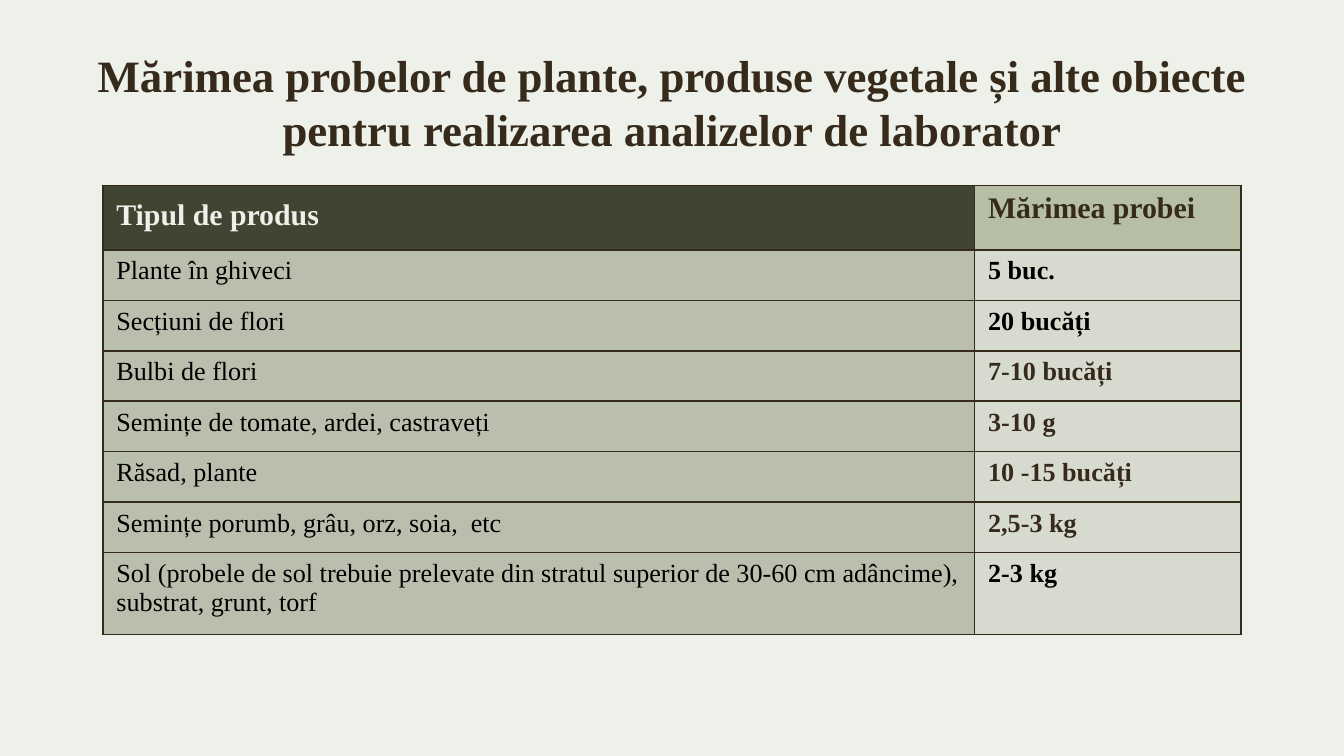
from dataclasses import dataclass

from lxml.etree import SubElement
from pptx import Presentation
from pptx.dml.color import RGBColor
from pptx.enum.text import MSO_ANCHOR, MSO_AUTO_SIZE, PP_ALIGN
from pptx.oxml.ns import qn
from pptx.util import Inches, Pt


@dataclass(frozen=True)
class Theme:
    font: str = "Times New Roman"
    paper: str = "EEF0EA"
    brown: str = "362A1B"
    black: str = "000000"
    olive: str = "3F4531"
    sage: str = "B6BFA5"
    moss: str = "727C57"
    product_opacity: int = 42
    amount_opacity: int = 18
    title_size: int = 24
    header_size: int = 16
    body_size: int = 14
    border: float = 1


THEME = Theme()
SLIDE_WIDTH = Inches(10)
SLIDE_HEIGHT = SLIDE_WIDTH * 9 // 16
TITLE = "Mărimea probelor de plante, produse vegetale și alte obiecte pentru realizarea analizelor de laborator"
HEADERS = ("Tipul de produs", "Mărimea probei")
SAMPLES = [
    ("Plante în ghiveci", "5 buc.", THEME.black),
    ("Secțiuni de flori", "20 bucăți", THEME.black),
    ("Bulbi de flori", "7-10 bucăți", THEME.brown),
    ("Semințe de tomate, ardei, castraveți", "3-10 g", THEME.brown),
    ("Răsad, plante", "10 -15 bucăți", THEME.brown),
    ("Semințe porumb, grâu, orz, soia,  etc", "2,5-3 kg", THEME.brown),
    ("Sol (probele de sol trebuie prelevate din stratul superior de 30-60 cm adâncime), "
     "substrat, grunt, torf", "2-3 kg", THEME.black),
]


def apply(target, formats):
    for attribute, value in formats.items():
        setattr(target, attribute, value)


def share_box(left, top, width, height):
    """Turn percentages of the slide into lengths."""
    return (int(SLIDE_WIDTH * left / 100), int(SLIDE_HEIGHT * top / 100),
            int(SLIDE_WIDTH * width / 100), int(SLIDE_HEIGHT * height / 100))


def write(paragraph, text, size, color, bold):
    paragraph.text = text
    apply(paragraph.runs[0].font, {"name": THEME.font, "size": Pt(size), "bold": bold})
    paragraph.runs[0].font.color.rgb = RGBColor.from_string(color)


def add_borders(cell):
    properties = cell._tc.get_or_add_tcPr()
    for side in ("lnL", "lnR", "lnT", "lnB"):
        line = SubElement(properties, qn(f"a:{side}"), w=str(Pt(THEME.border)))
        paint = SubElement(line, qn("a:solidFill"))
        SubElement(paint, qn("a:srgbClr"), val=THEME.brown)


def fill_cell(cell, color, opacity=100):
    cell.fill.solid()
    cell.fill.fore_color.rgb = RGBColor.from_string(color)
    if opacity < 100:
        tint = cell._tc.tcPr.find(f"{qn('a:solidFill')}/{qn('a:srgbClr')}")
        SubElement(tint, qn("a:alpha"), val=str(opacity * 1000))


def place_cell(cell, text, size, color, bold, fill, opacity=100, inset=0.05):
    apply(cell, {"margin_left": Inches(0.1), "margin_right": Inches(0.1),
                 "margin_top": Inches(inset), "margin_bottom": Inches(inset),
                 "vertical_anchor": MSO_ANCHOR.TOP})
    add_borders(cell)
    fill_cell(cell, fill, opacity)
    write(cell.text_frame.paragraphs[0], text, size, color, bold)


def place_title(slide, box):
    title = slide.shapes.title
    apply(title, dict(zip(("left", "top", "width", "height"), box)))
    inset = Inches(0.1)
    apply(title.text_frame, {"margin_left": inset, "margin_right": inset,
                             "margin_top": inset, "margin_bottom": inset,
                             "word_wrap": True, "auto_size": MSO_AUTO_SIZE.NONE,
                             "vertical_anchor": MSO_ANCHOR.TOP})
    heading = title.text_frame.paragraphs[0]
    write(heading, TITLE, THEME.title_size, THEME.brown, True)
    heading.alignment = PP_ALIGN.CENTER


def place_samples(slide, box):
    width, height = box[2:]
    table = slide.shapes.add_table(len(SAMPLES) + 1, len(HEADERS), *box).table
    apply(table, {"first_row": True, "horz_banding": False})

    amount_width = Inches(1.98)
    table.columns[0].width = width - amount_width
    table.columns[1].width = amount_width

    header_height, soil_height = Inches(0.48), Inches(0.61)
    single_rows = len(SAMPLES) - 1
    single_height = (height - header_height - soil_height) // single_rows
    row_heights = [header_height, *[single_height] * single_rows, soil_height]
    for row, row_height in zip(table.rows, row_heights):
        row.height = row_height

    product_header, amount_header = HEADERS
    place_cell(table.cell(0, 0), product_header, THEME.header_size, THEME.paper,
               True, THEME.olive, inset=0.1)
    place_cell(table.cell(0, 1), amount_header, THEME.header_size, THEME.brown,
               True, THEME.sage)
    for row, (product, amount, amount_color) in enumerate(SAMPLES, start=1):
        place_cell(table.cell(row, 0), product, THEME.body_size, THEME.black,
                   False, THEME.moss, THEME.product_opacity)
        place_cell(table.cell(row, 1), amount, THEME.body_size, amount_color,
                   True, THEME.moss, THEME.amount_opacity)


def main():
    deck = Presentation()
    apply(deck, {"slide_width": SLIDE_WIDTH, "slide_height": SLIDE_HEIGHT})
    title_only = deck.slide_layouts[5]
    slide = deck.slides.add_slide(title_only)
    slide.background.fill.solid()
    slide.background.fill.fore_color.rgb = RGBColor.from_string(THEME.paper)
    place_title(slide, share_box(4.45, 4.58, 91.1, 11.2))
    place_samples(slide, share_box(7.66, 24.53, 84.66, 59.4))
    deck.save("out.pptx")


if __name__ == "__main__":
    main()
